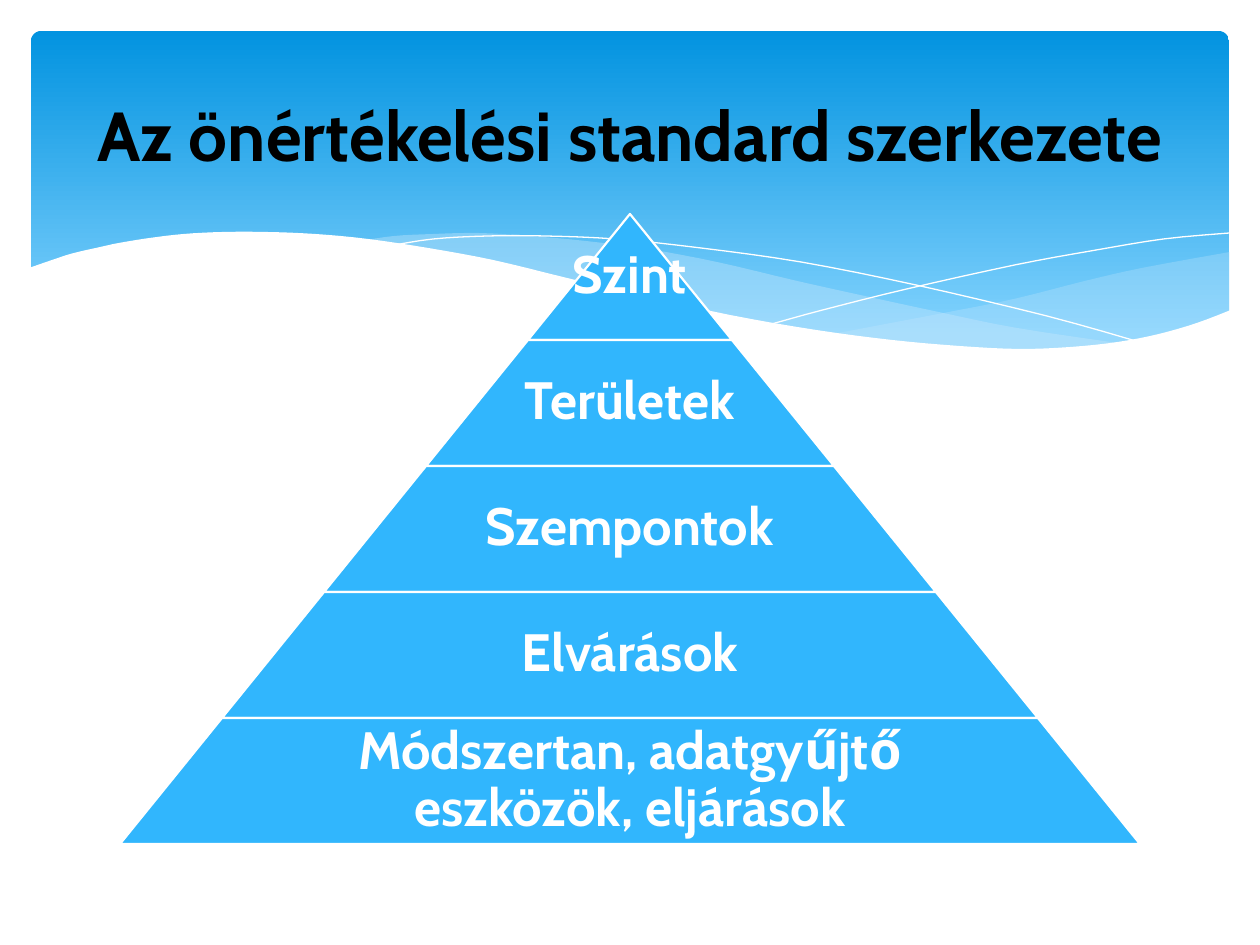
from dataclasses import dataclass

from lxml import etree
from pptx import Presentation
from pptx.dml.color import RGBColor
from pptx.enum.shapes import MSO_SHAPE
from pptx.enum.text import MSO_ANCHOR, PP_ALIGN
from pptx.oxml.ns import qn
from pptx.util import Pt

ROUNDED = MSO_SHAPE.ROUNDED_RECTANGLE
TRAPEZOID = MSO_SHAPE.TRAPEZOID
MIDDLE = MSO_ANCHOR.MIDDLE
CENTER = PP_ALIGN.CENTER


@dataclass(frozen=True)
class Theme:
    font: str = "Cabin"
    title_size: float = 39.6
    tier_size: float = 30
    outline: float = 1.25
    black: str = "000000"
    white: str = "FFFFFF"
    tier: str = "31B6FD"
    wave: str = "C6E7FC"
    banner_top: str = "0293E0"
    banner_bottom: str = "83D3FE"


THEME = Theme()
PX = 914400 // 126
SLIDE = (1260, 945)

TITLE = "Az önértékelési standard szerkezete"
TIERS = ["Szint", "Területek", "Szempontok", "Elvárások",
         "Módszertan, adatgyűjtő eszközök, eljárások"]

TITLE_BOX = (63, 47, 1134, 173)
BANNER_BOX = (31, 31, 1198, 340)
PYRAMID_TOP = 214
TIER_HEIGHT = 126
TIER_STEP = 204
TIER_SLOPE = 0.81
TEXT_SHARE = 0.65
TIER_INSET = 5

RIGHT_WAVE = [
    [(1230, 252), (1142, 268), (1085, 281), (1014, 299), (949, 312), (833, 334)],
    [(833, 334), (922, 345), (1012, 350), (1087, 348), (1150, 337), (1196, 324),
     (1230, 311)],
]
LONG_WAVE = [
    [(1125, 344), (1017, 328), (934, 311), (842, 291), (793, 280), (717, 262),
     (648, 249), (586, 241), (530, 236), (479, 233), (433, 234), (394, 236), (360, 241)],
    [(360, 241), (456, 256), (538, 273), (618, 292), (713, 312), (799, 329),
     (876, 340), (943, 347), (1003, 350), (1056, 350), (1104, 347), (1125, 344)],
]
FALLING_LINE = [
    [(389, 246), (433, 239), (488, 236), (545, 236), (616, 239), (701, 248),
     (801, 262), (916, 285), (1047, 316), (1143, 343)],
]
RISING_LINE = [
    [(772, 324), (823, 310), (907, 289), (1015, 265), (1091, 251), (1164, 239),
     (1230, 233)],
]
FRONT_WAVE = [
    [(1231, 310), (1197, 323), (1159, 334), (1118, 342), (1071, 347), (1019, 349),
     (959, 346), (892, 340), (816, 330), (730, 315), (634, 294), (563, 277),
     (493, 260), (428, 248), (368, 239), (315, 234), (266, 232), (223, 232),
     (184, 234), (150, 238), (119, 243), (96, 248), (74, 253), (58, 258), (29, 268)],
    [(29, 415), (1231, 415)],
]
WAVES = [
    (RIGHT_WAVE, THEME.wave, 29),
    (LONG_WAVE, THEME.wave, 40),
    (FALLING_LINE, None, 100),
    (RISING_LINE, None, 100),
    (FRONT_WAVE, THEME.white, 100),
]


def color(value):
    return RGBColor.from_string(value)


def emu(values):
    return [round(value * PX) for value in values]


def smooth(knots, steps=4):
    if len(knots) < 3:
        return knots
    padded = [knots[0], *knots, knots[-1]]
    points = [knots[0]]
    for a, b, c, d in zip(padded, padded[1:], padded[2:], padded[3:]):
        for step in range(1, steps + 1):
            t = step / steps
            points.append(tuple(
                (2 * q + (r - p) * t + (2 * p - 5 * q + 4 * r - s) * t ** 2
                 + (3 * q - p - 3 * r + s) * t ** 3) / 2
                for p, q, r, s in zip(a, b, c, d)))
    return points


def add_banner(page):
    banner = page.shapes.add_shape(ROUNDED, *emu(BANNER_BOX))
    banner.adjustments[0] = 0.03
    banner.shadow.inherit = False
    banner.line.fill.background()
    banner.fill.gradient()
    banner.fill.gradient_angle = 270
    stops = zip(banner.fill.gradient_stops, (0, 0.9),
                (THEME.banner_top, THEME.banner_bottom))
    for stop, position, shade in stops:
        stop.position = position
        stop.color.rgb = color(shade)


def add_wave(page, curves, shade, opacity):
    points = [emu(point) for curve in curves for point in smooth(curve)]
    builder = page.shapes.build_freeform(*points[0])
    builder.add_line_segments(points[1:], close=shade is not None)
    wave = builder.convert_to_shape()
    wave.shadow.inherit = False
    if shade is None:
        wave.fill.background()
        wave.line.color.rgb = color(THEME.white)
        wave.line.width = Pt(0)
        return
    wave.line.fill.background()
    wave.fill.solid()
    wave.fill.fore_color.rgb = color(shade)
    if opacity < 100:
        tint = wave.fill._xPr.find(".//" + qn("a:srgbClr"))
        etree.SubElement(tint, qn("a:alpha"), val=str(opacity * 1000))


def add_text(page, bounds, text, size, shade):
    box = page.shapes.add_textbox(*emu(bounds))
    frame = box.text_frame
    frame.word_wrap = True
    frame.vertical_anchor = MIDDLE
    para = frame.paragraphs[0]
    para.text = text
    para.alignment = CENTER
    para.font.name = THEME.font
    para.font.size = Pt(size)
    para.font.bold = True
    para.font.color.rgb = color(shade)
    return frame


def add_tier(page, index, label):
    width = TIER_STEP * (index + 1)
    top = PYRAMID_TOP + TIER_HEIGHT * index
    center = SLIDE[0] / 2
    tier = page.shapes.add_shape(
        TRAPEZOID, *emu((center - width / 2, top, width, TIER_HEIGHT)))
    tier.adjustments[0] = TIER_SLOPE
    tier.shadow.inherit = False
    tier.fill.solid()
    tier.fill.fore_color.rgb = color(THEME.tier)
    tier.line.color.rgb = color(THEME.white)
    tier.line.width = Pt(THEME.outline)

    text_width = width * TEXT_SHARE if index else width
    frame = add_text(page, (center - text_width / 2, top, text_width, TIER_HEIGHT),
                     label, THEME.tier_size, THEME.white)
    frame.paragraphs[0].line_spacing = 0.9
    frame.margin_left = frame.margin_right = TIER_INSET * PX
    frame.margin_top = frame.margin_bottom = TIER_INSET * PX


def main():
    deck = Presentation()
    deck.slide_width, deck.slide_height = emu(SLIDE)
    page = deck.slides.add_slide(deck.slide_layouts[6])
    add_banner(page)
    for wave in WAVES:
        add_wave(page, *wave)
    for index, label in enumerate(TIERS):
        add_tier(page, index, label)
    add_text(page, TITLE_BOX, TITLE, THEME.title_size, THEME.black)
    deck.save("out.pptx")


if __name__ == "__main__":
    main()
